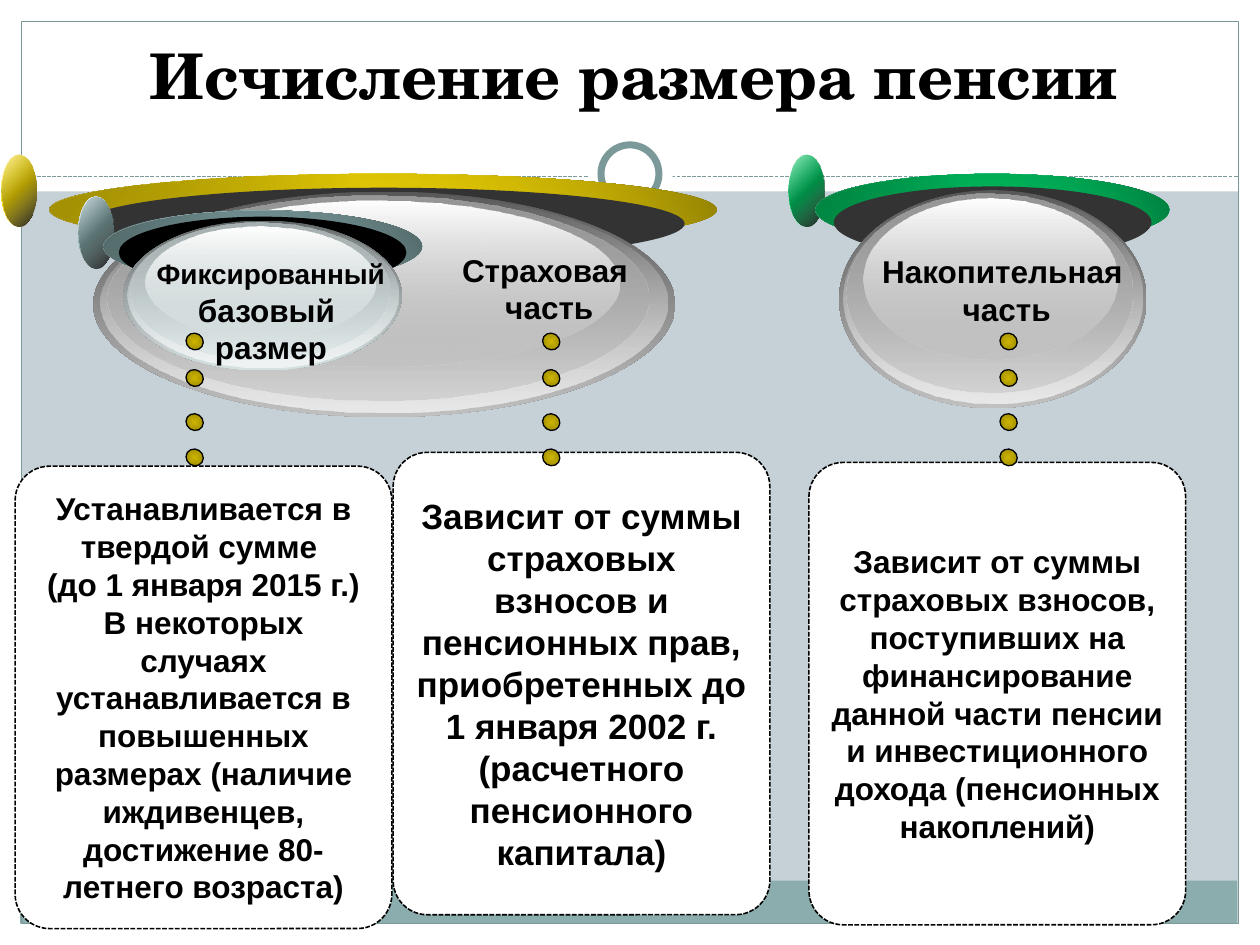
from lxml.etree import SubElement
from pptx import Presentation
from pptx.dml.color import RGBColor
from pptx.enum.dml import MSO_LINE
from pptx.enum.shapes import MSO_CONNECTOR, MSO_SHAPE as SHAPE
from pptx.enum.text import MSO_ANCHOR, MSO_AUTO_SIZE, PP_ALIGN
from pptx.oxml import parse_xml
from pptx.oxml.ns import nsdecls, qn
from pptx.util import Inches, Pt

COLORS = {
    "white": "FFFFFF", "black": "000000", "back": "C5D1D7", "band": "8CADAE",
    "frame": "7C999A", "yellow": "FCDF06", "teal": "83A6A7", "green": "00CC66",
    "grey": "C0C0C0", "mist": "D6E1E2", "coal": "333333",
    "dot": "CCB400", "dot_edge": "938200",
}
WHITE, BLACK = COLORS["white"], COLORS["black"]
DOT_TOPS = (2.64, 2.93, 3.28, 3.56)


def rgb(color):
    """Turn a hex string into a colour object."""
    return RGBColor.from_string(color)


def mix(color, target, share):
    """Blend a colour with a target, keeping the given share of the colour."""
    pairs = ((int(color[i:i + 2], 16), int(target[i:i + 2], 16)) for i in (0, 2, 4))
    return "".join(f"{round(a * share + b * (1 - share)):02X}" for a, b in pairs)


def add_box(shapes, kind, frame, fill=None, line=None, width=0.75):
    """Add a preset shape with a plain fill and outline."""
    box = shapes.add_shape(kind, *(Inches(value) for value in frame))
    box.shadow.inherit = False
    if fill:
        box.fill.solid()
        box.fill.fore_color.rgb = rgb(fill)
    else:
        box.fill.background()
    if line:
        box.line.color.rgb = rgb(line)
        box.line.width = Pt(width)
    else:
        box.line.fill.background()
    return box


def set_gradient(box, stops, angle=None):
    """Fill a shape with (position, colour, opacity) stops, radial without an angle."""
    fill = parse_xml(f'<a:gradFill {nsdecls("a")} rotWithShape="1"><a:gsLst/></a:gradFill>')
    for position, color, opacity in stops:
        stop = SubElement(fill[0], qn("a:gs"), pos=str(position * 1000))
        paint = SubElement(stop, qn("a:srgbClr"), val=color)
        if opacity < 100:
            SubElement(paint, qn("a:alpha"), val=str(opacity * 1000))
    if angle is None:
        radial = SubElement(fill, qn("a:path"), path="shape")
        SubElement(radial, qn("a:fillToRect"), l="50000", t="50000", r="50000", b="50000")
    else:
        SubElement(fill, qn("a:lin"), ang=str(angle * 60000), scaled="1")
    properties = box._element.spPr
    properties.replace(properties.find(qn("a:noFill")), fill)


def add_oval(shapes, frame, stops, angle):
    """Add an ellipse with a linear gradient."""
    set_gradient(add_box(shapes, SHAPE.OVAL, frame), stops, angle)


def write(frame, lines, sizes):
    """Write centred bold paragraphs into a text frame."""
    for index, (line, size) in enumerate(zip(lines, sizes)):
        para = frame.paragraphs[0] if index == 0 else frame.add_paragraph()
        para.text = line
        para.alignment = PP_ALIGN.CENTER
        para.font.name = "Arial"
        para.font.size = Pt(size)
        para.font.bold = True
        para.font.color.rgb = rgb(BLACK)


def add_backdrop(page):
    """Draw the page background, bands, frame and ring."""
    page.background.fill.solid()
    page.background.fill.fore_color.rgb = rgb(COLORS["back"])
    for frame in ((0, 7.33, 10, 0.17), (0, 0, 10, 1.52),
                  (0, 0, 0.17, 7.5), (9.83, 0, 0.17, 7.5)):
        add_box(page.shapes, SHAPE.RECTANGLE, frame, WHITE)
    add_box(page.shapes, SHAPE.RECTANGLE, (0.16, 6.99, 9.66, 0.34), COLORS["band"])
    add_box(page.shapes, SHAPE.RECTANGLE, (0.17, 0.17, 9.66, 7.16), line=COLORS["frame"])
    rule = page.shapes.add_connector(
        MSO_CONNECTOR.STRAIGHT, Inches(0.17), Inches(1.4), Inches(9.83), Inches(1.4))
    rule.line.color.rgb = rgb(COLORS["frame"])
    rule.line.width = Pt(0.75)
    rule.line.dash_style = MSO_LINE.SQUARE_DOT
    SubElement(rule._element.spPr, qn("a:effectLst"))
    add_box(page.shapes, SHAPE.OVAL, (4.67, 1.05, 0.67, 0.67), WHITE)
    add_box(page.shapes, SHAPE.OVAL, (4.77, 1.15, 0.46, 0.46), WHITE, COLORS["frame"], 4)


def add_title(page, text):
    """Format the title placeholder and bring it above the backdrop."""
    title = page.shapes.title
    page.shapes._spTree.append(title._element)
    title.left, title.top = Inches(0.99), Inches(0.21)
    title.width, title.height = Inches(8.08), Inches(0.73)
    frame = title.text_frame
    frame.word_wrap = True
    frame.auto_size = MSO_AUTO_SIZE.NONE
    frame.vertical_anchor = MSO_ANCHOR.BOTTOM
    para = frame.paragraphs[0]
    para.alignment = PP_ALIGN.CENTER
    span = para.add_run()
    span.text = text
    span.font.name = "TeX Gyre Schola"
    span.font.size = Pt(36)
    span.font.bold = True
    span.font.color.rgb = rgb(BLACK)
    shadow = parse_xml(
        f'<a:effectLst {nsdecls("a")}><a:outerShdw dist="35921" dir="2700000">'
        f'<a:srgbClr val="{COLORS["back"]}"/></a:outerShdw></a:effectLst>')
    span._r.rPr.find(qn("a:solidFill")).addnext(shadow)


def add_disc(page, knob, rim, body, accent, tone, shade):
    """Draw a knob, a coloured rim and a glossy body as one group."""
    shapes = page.shapes.add_group_shape().shapes
    knob_frame, rim_frame = (*knob, 0.28, 0.57), (*rim, 0.57)
    dark, deep = mix(accent, BLACK, 0.54), mix(accent, BLACK, 0.64)
    add_oval(shapes, knob_frame, [(0, WHITE, 100), (50, accent, 100), (100, WHITE, 100)], 45)
    add_oval(shapes, knob_frame, [(0, accent, 32), (100, BLACK, 90)], 45)
    add_oval(shapes, rim_frame, [(0, dark, 100), (50, accent, 100), (100, dark, 100)], 315)
    add_oval(shapes, rim_frame, [(0, deep, 100), (100, accent, 0)], 45)
    left, top, width, height = body
    add_box(shapes, SHAPE.OVAL, (left - 0.017 * width, top - 0.03, 1.033 * width, 0.57), shade)
    layers = (
        (0, 0, 1, 1, mix(tone, BLACK, 0.46), 100, tone, 100),
        (0.013, 0.006, 0.974, 0.973, tone, 0, mix(tone, WHITE, 0.35), 100),
        (0.024, 0.017, 0.93, 0.912, mix(tone, BLACK, 0.79), 100, tone, 48),
        (0.078, 0.04, 0.826, 0.738, WHITE, 100, tone, 38),
    )
    for x, y, w, h, start, start_alpha, end, end_alpha in layers:
        frame = (left + x * width, top + y * height, w * width, h * height)
        add_oval(shapes, frame, [(0, start, start_alpha), (100, end, end_alpha)], 90)


def add_label(page, frame, lines, sizes):
    """Add an unwrapped label over a disc."""
    box = page.shapes.add_textbox(*(Inches(value) for value in frame))
    box.text_frame.word_wrap = False
    box.text_frame.auto_size = MSO_AUTO_SIZE.SHAPE_TO_FIT_TEXT
    write(box.text_frame, lines, sizes)


def add_card(page, left, top, lines, size):
    """Add a dashed rounded card with centred text."""
    card = add_box(page.shapes, SHAPE.ROUNDED_RECTANGLE, (left, top, 2.99, 3.67), WHITE, BLACK, 0.9)
    card.adjustments[0] = 0.091
    card.line.dash_style = MSO_LINE.SQUARE_DOT
    card.text_frame.word_wrap = True
    card.text_frame.vertical_anchor = MSO_ANCHOR.MIDDLE
    write(card.text_frame, lines, [size] * len(lines))


def add_dots(page, left):
    """Draw a column of dots leading from a disc to its card."""
    shapes = page.shapes.add_group_shape().shapes
    for top in DOT_TOPS:
        dot = add_box(shapes, SHAPE.OVAL, (left, top, 0.13, 0.14), line=BLACK)
        dot.rotation = 303.8
        set_gradient(dot, [(0, COLORS["dot"], 100), (100, COLORS["dot_edge"], 100)])


def main():
    """Build the pension slide and save it."""
    deck = Presentation()
    deck.slide_width, deck.slide_height = Inches(10), Inches(7.5)
    page = deck.slides.add_slide(deck.slide_layouts[5])
    add_backdrop(page)
    add_title(page, "Исчисление размера пенсии")
    add_disc(page, (0.01, 1.23), (0.39, 1.38, 5.3), (0.74, 1.52, 4.62, 1.79),
             COLORS["yellow"], COLORS["grey"], COLORS["coal"])
    add_disc(page, (0.62, 1.56), (0.82, 1.67, 2.53), (0.98, 1.75, 2.21, 1.19),
             COLORS["teal"], COLORS["mist"], BLACK)
    add_label(page, (1.13, 1.99, 2.04, 0.98), ["Фиксированный", "базовый ", "размер"], [16, 18, 18])
    add_label(page, (3.56, 1.94, 1.6, 0.71), ["Страховая ", "часть"], [18, 18])
    add_disc(page, (6.26, 1.23), (6.47, 1.38, 2.81), (6.66, 1.51, 2.44, 1.73),
             COLORS["green"], COLORS["grey"], COLORS["coal"])
    add_label(page, (6.89, 1.95, 2.2, 0.71), ["Накопительная ", "часть"], [18, 18])
    add_card(page, 3.12, 3.59, [
        "Зависит от суммы страховых взносов и пенсионных прав, приобретенных "
        "до 1 января 2002 г. (расчетного пенсионного капитала)"], 20)
    add_card(page, 0.12, 3.7, [
        "Устанавливается в твердой сумме ", "(до 1 января 2015 г.)",
        "В некоторых случаях устанавливается в повышенных размерах "
        "(наличие иждивенцев, достижение 80-летнего возраста)"], 18)
    add_card(page, 6.42, 3.67, [
        "Зависит от суммы страховых взносов, поступивших на финансирование данной "
        "части пенсии и инвестиционного дохода (пенсионных накоплений)"], 18)
    for left in (1.48, 4.31, 7.94):
        add_dots(page, left)
    deck.save("out.pptx")


if __name__ == "__main__":
    main()
